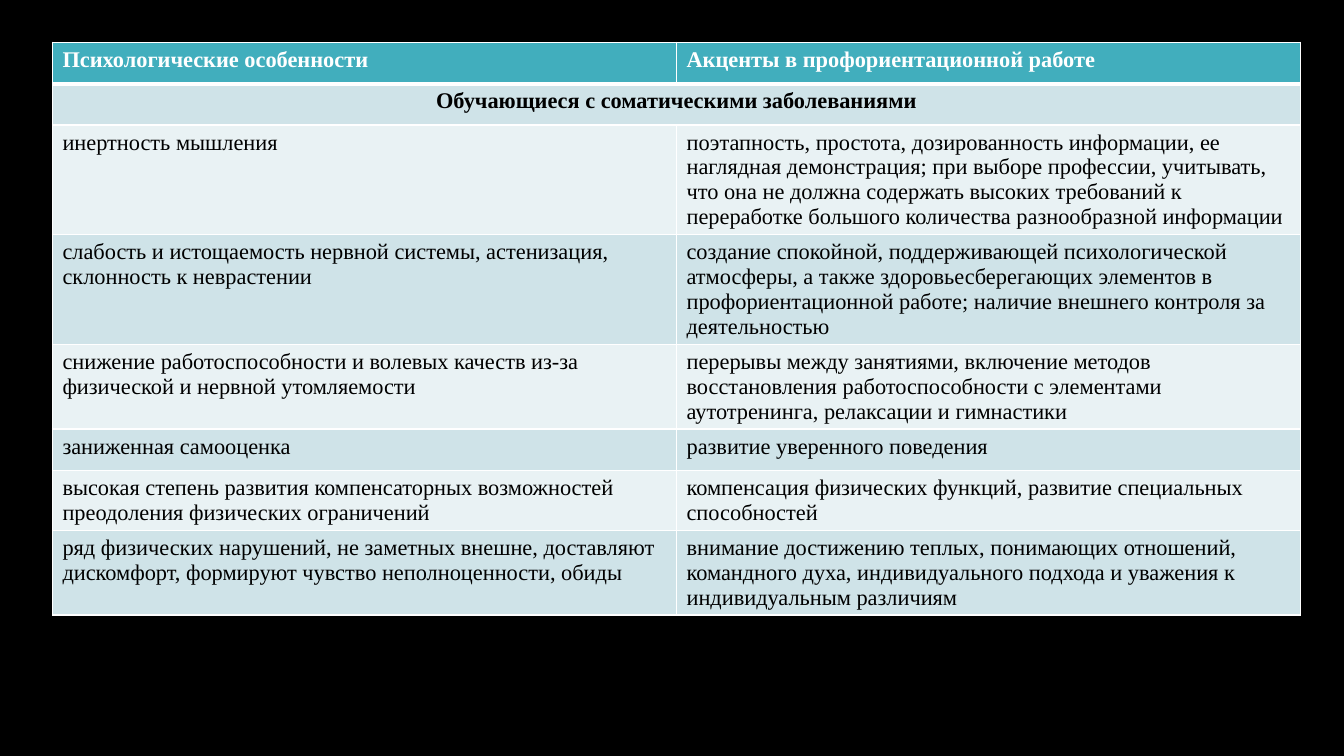
"""Build a slide with a table of career-guidance accents for students with somatic illnesses."""
from dataclasses import dataclass

from lxml.etree import SubElement
from pptx import Presentation
from pptx.dml.color import RGBColor as Rgb
from pptx.enum.text import PP_ALIGN as Align
from pptx.oxml.ns import qn
from pptx.util import Inches, Pt


@dataclass(frozen=True)
class Theme:
    font: str = "Times New Roman"
    size: int = 16
    backdrop: str = "000000"
    header: str = "41AEBD"
    bands: tuple = ("E9F2F4", "CFE3E8")
    light: str = "FFFFFF"
    dark: str = "000000"
    thin: int = 1
    thick: int = 3


def add_border(cell, side, weight):
    line = SubElement(cell._tc.get_or_add_tcPr(), qn(f"a:ln{side}"), w=str(Pt(weight)))
    SubElement(SubElement(line, qn("a:solidFill")), qn("a:srgbClr"), val=theme.light)


theme = Theme()
ROW_HEIGHT = Inches(0.41)
COLUMN_WIDTH = Inches(6.19)
guidance = [
    ("Психологические особенности", "Акценты в профориентационной работе"),
    ("Обучающиеся с соматическими заболеваниями",),
    ("инертность мышления",
     "поэтапность, простота, дозированность информации, ее наглядная демонстрация; "
     "при выборе профессии, учитывать, что она не должна содержать высоких требований "
     "к переработке большого количества разнообразной информации"),
    ("слабость и истощаемость нервной системы, астенизация, склонность к неврастении",
     "создание спокойной, поддерживающей психологической атмосферы, а также "
     "здоровьесберегающих элементов в профориентационной работе; "
     "наличие внешнего контроля за деятельностью"),
    ("снижение работоспособности и волевых качеств из-за физической и нервной утомляемости",
     "перерывы между занятиями, включение методов восстановления работоспособности "
     "с элементами аутотренинга, релаксации и гимнастики"),
    ("заниженная самооценка", "развитие уверенного поведения"),
    ("высокая степень развития компенсаторных возможностей преодоления физических ограничений",
     "компенсация физических функций, развитие специальных способностей"),
    ("ряд физических нарушений, не заметных внешне, доставляют дискомфорт, "
     "формируют чувство неполноценности, обиды",
     "внимание достижению теплых, понимающих отношений, командного духа, "
     "индивидуального подхода и уважения к индивидуальным различиям"),
]
alignments = {0: Align.JUSTIFY, 1: Align.CENTER}

deck = Presentation()
deck.slide_width, deck.slide_height = Inches(13.33), Inches(7.5)
slide = deck.slides.add_slide(deck.slide_layouts[6])
slide.background.fill.solid()
slide.background.fill.fore_color.rgb = Rgb.from_string(theme.backdrop)

frame = slide.shapes.add_table(len(guidance), 2, Inches(0.52), Inches(0.42),
                               2 * COLUMN_WIDTH, len(guidance) * ROW_HEIGHT)
accents = frame.table
accents.cell(1, 0).merge(accents.cell(1, 1))

for row, entries in enumerate(guidance):
    fill = theme.bands[row % 2] if row else theme.header
    for column in range(2):
        cell = accents.cell(row, column)
        add_border(cell, "L", theme.thin)
        add_border(cell, "R", theme.thin)
        add_border(cell, "T", theme.thick if row == 1 else theme.thin)
        add_border(cell, "B", theme.thick if row == 0 else theme.thin)
        cell.fill.solid()
        cell.fill.fore_color.rgb = Rgb.from_string(fill)
    for column, wording in enumerate(entries):
        paragraph = accents.cell(row, column).text_frame.paragraphs[0]
        paragraph.alignment = alignments.get(row, Align.LEFT)
        run = paragraph.add_run()
        run.text = wording
        run.font.name = theme.font
        run.font.size = Pt(theme.size)
        run.font.bold = row < 2
        run.font.color.rgb = Rgb.from_string(theme.dark if row else theme.light)

frame.height = Inches(5.98)
deck.save("out.pptx")
